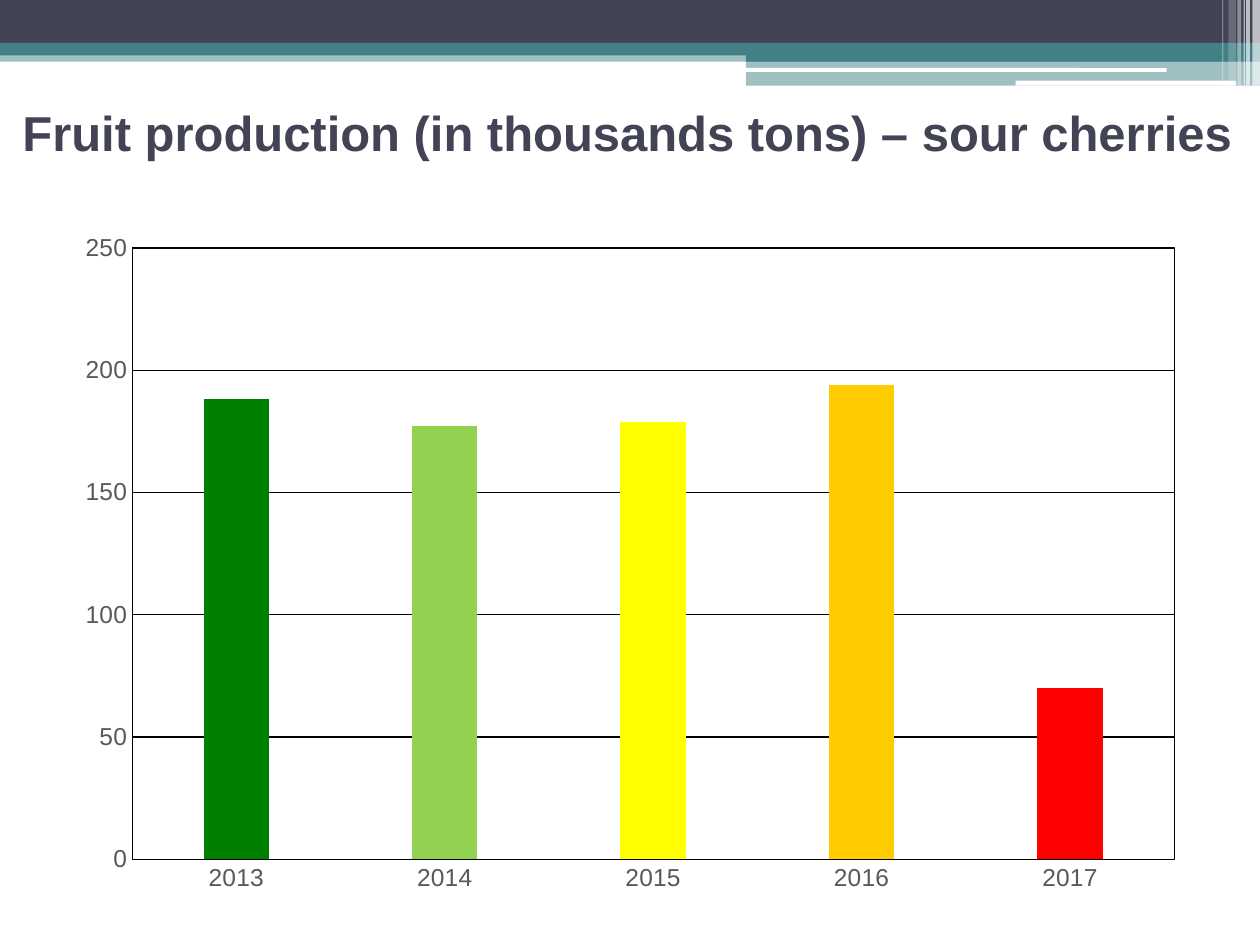
import pptx
import pptx.chart.data
import pptx.dml.color
import pptx.enum.chart
import pptx.enum.shapes
import pptx.enum.text
import pptx.oxml
import pptx.oxml.ns
import pptx.util
from lxml import etree

Inches = pptx.util.Inches
Pt = pptx.util.Pt
RGBColor = pptx.dml.color.RGBColor
RECT = pptx.enum.shapes.MSO_SHAPE.RECTANGLE
ROUNDED = pptx.enum.shapes.MSO_SHAPE.ROUNDED_RECTANGLE

NAVY = RGBColor(0x42, 0x44, 0x56)
TEAL = RGBColor(0x43, 0x80, 0x86)
WHITE = RGBColor(0xFF, 0xFF, 0xFF)
BLACK = RGBColor(0, 0, 0)
GRAY = RGBColor(0x59, 0x59, 0x59)
INDIGO = RGBColor(0x53, 0x54, 0x8A)
GREEN = RGBColor(0, 0x80, 0)
LIME = RGBColor(0x92, 0xD0, 0x50)
YELLOW = RGBColor(0xFF, 0xFF, 0)
AMBER = RGBColor(0xFF, 0xCC, 0)
RED = RGBColor(0xFF, 0, 0)

TITLE = "Fruit production (in thousands tons) – sour cherries"
HARVEST = [
    ("2013", 188, GREEN),
    ("2014", 177, LIME),
    ("2015", 179, YELLOW),
    ("2016", 194, AMBER),
    ("2017", 70, RED),
]
BANDS = [
    (RECT, 0, 0.4, 10, 0.09, TEAL, 50),
    (RECT, 0, 0, 10, 0.34, NAVY, 100),
    (RECT, 0, 0.34, 10, 0.1, TEAL, 100),
    (RECT, 5.92, 0.39, 4.08, 0.1, TEAL, 100),
    (RECT, 5.92, 0.48, 4.08, 0.2, TEAL, 50),
    (ROUNDED, 5.91, 0.54, 3.35, 0.03, WHITE, 100),
    (ROUNDED, 8.06, 0.64, 1.75, 0.04, WHITE, 100),
]
STRIPES = [
    (9.94, 0.06, 0.68, 65),
    (9.89, 0.03, 0.68, 65),
    (9.87, 0.01, 0.68, 60),
    (9.82, 0.03, 0.68, 40),
    (9.75, 0.06, 0.64, 20),
    (9.7, 0.01, 0.64, 30),
]
CHART_BOX = (0.5, 1.75, 9, 5.44)
PLOT_BOX = (1.05, 1.97, 8.27, 4.85)


def add_band(slide, preset, left, top, width, height, color, opacity):
    band = slide.shapes.add_shape(
        preset, Inches(left), Inches(top), Inches(width), Inches(height))
    band.shadow.inherit = False
    band.line.fill.background()
    band.fill.solid()
    band.fill.fore_color.rgb = color
    if opacity < 100:
        tint = band.fill._xPr.find(".//" + pptx.oxml.ns.qn("a:srgbClr"))
        etree.SubElement(tint, pptx.oxml.ns.qn("a:alpha"), val=str(opacity * 1000))


def add_title(slide):
    heading = slide.shapes.add_textbox(Inches(0.08), Inches(0.67), Inches(9.92), Inches(0.75))
    frame = heading.text_frame
    frame.word_wrap = True
    frame.vertical_anchor = pptx.enum.text.MSO_ANCHOR.MIDDLE
    run = frame.paragraphs[0].add_run()
    run.text = TITLE
    run.font.name = "Arial"
    run.font.size = Pt(28)
    run.font.bold = True
    run.font.color.rgb = NAVY


def set_font(font, name, size, color):
    font.name = name
    font.size = Pt(size)
    font.color.rgb = color


def set_line(line):
    line.color.rgb = BLACK
    line.width = Pt(0.75)


def frame_plot(chart):
    left, top, width, height = CHART_BOX
    x, y, w, h = PLOT_BOX
    shares = {"x": (x - left) / width, "y": (y - top) / height,
              "w": w / width, "h": h / height}
    sizes = "".join(f'<c:{side} val="{share:.3f}"/>' for side, share in shares.items())
    layout = pptx.oxml.parse_xml(
        f'<c:layout {pptx.oxml.ns.nsdecls("c")}><c:manualLayout>'
        '<c:layoutTarget val="inner"/><c:xMode val="edge"/><c:yMode val="edge"/>'
        f'{sizes}</c:manualLayout></c:layout>')
    border = pptx.oxml.parse_xml(
        f'<c:spPr {pptx.oxml.ns.nsdecls("c", "a")}><a:noFill/><a:ln w="{Pt(0.75)}">'
        f'<a:solidFill><a:srgbClr val="{BLACK}"/></a:solidFill></a:ln></c:spPr>')
    plot_area = chart._chartSpace.chart.plotArea
    for old in plot_area.findall(pptx.oxml.ns.qn("c:layout")):
        plot_area.remove(old)
    plot_area.insert(0, layout)
    plot_area.append(border)


def add_harvest_chart(slide):
    data = pptx.chart.data.CategoryChartData()
    data.categories = [year for year, _, _ in HARVEST]
    data.add_series("Series 1", [tons for _, tons, _ in HARVEST])
    chart = slide.shapes.add_chart(
        pptx.enum.chart.XL_CHART_TYPE.COLUMN_CLUSTERED,
        *map(Inches, CHART_BOX), data).chart
    chart.has_legend = False
    chart.has_title = False
    set_font(chart.font, "Cambria", 10, BLACK)

    plot = chart.plots[0]
    plot.vary_by_categories = False
    plot.gap_width = 219
    plot.overlap = -27
    columns = plot.series[0]
    columns.format.fill.solid()
    columns.format.fill.fore_color.rgb = INDIGO
    for index, (_, _, color) in enumerate(HARVEST):
        fill = columns.points[index].format.fill
        fill.solid()
        fill.fore_color.rgb = color

    years, tons = chart.category_axis, chart.value_axis
    for axis in (years, tons):
        axis.major_tick_mark = pptx.enum.chart.XL_TICK_MARK.NONE
        axis.minor_tick_mark = pptx.enum.chart.XL_TICK_MARK.NONE
        set_font(axis.tick_labels.font, "Arial", 14, GRAY)
    set_line(years.format.line)
    tons.format.line.fill.background()
    tons.minimum_scale, tons.maximum_scale, tons.major_unit = 0, 250, 50
    tons.has_major_gridlines = True
    set_line(tons.major_gridlines.format.line)
    frame_plot(chart)


def main():
    deck = pptx.Presentation()
    deck.slide_width, deck.slide_height = Inches(10), Inches(7.5)
    slide = deck.slides.add_slide(deck.slide_layouts[6])
    for band in BANDS:
        add_band(slide, *band)
    for left, width, height, opacity in STRIPES:
        add_band(slide, RECT, left, 0, width, height, WHITE, opacity)
    add_title(slide)
    add_harvest_chart(slide)
    deck.save("out.pptx")


if __name__ == "__main__":
    main()
